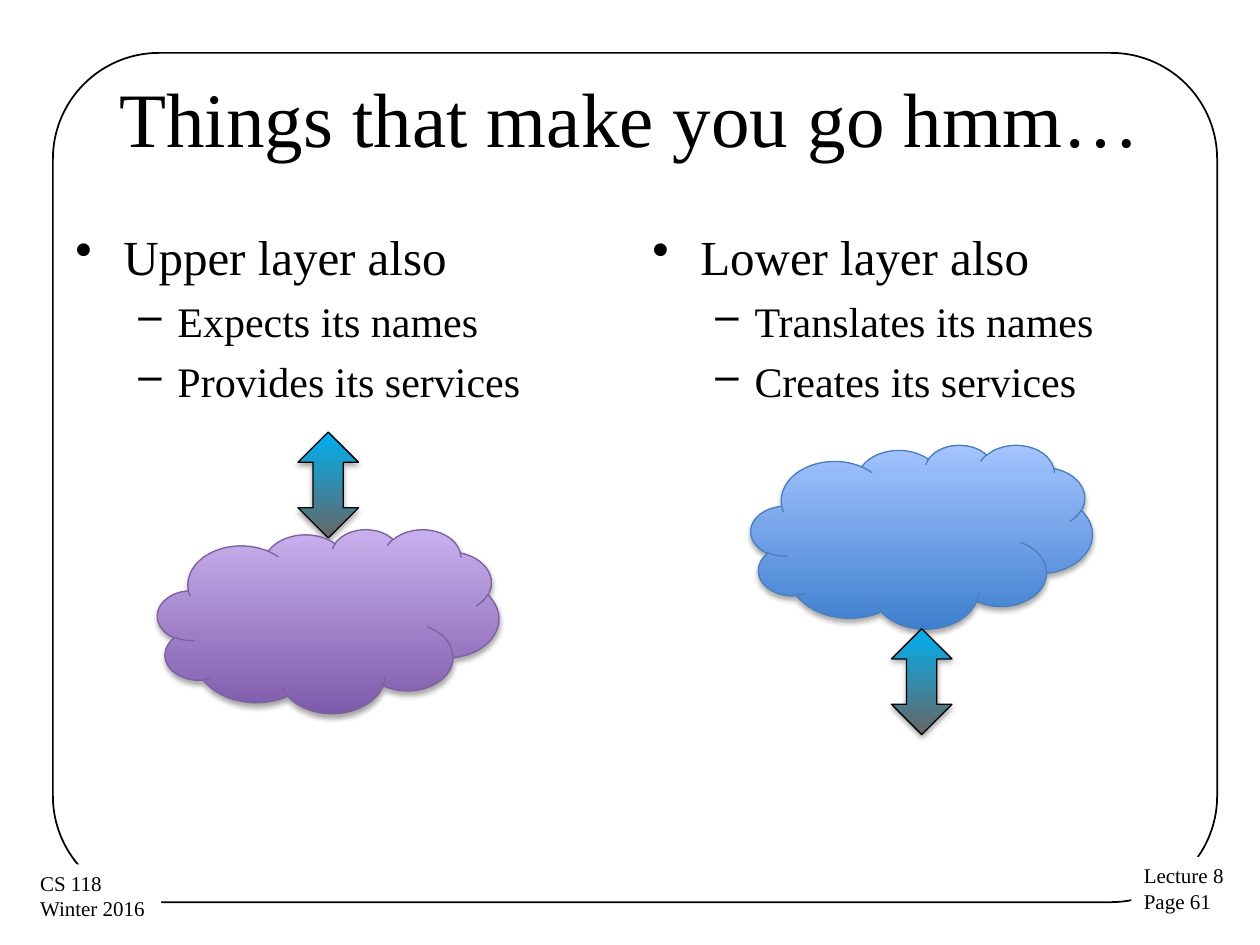
import pptx
import pptx.dml.color
import pptx.enum.shapes
import pptx.enum.text
import pptx.oxml
import pptx.oxml.ns
import pptx.util

RGB = pptx.dml.color.RGBColor
SHAPE = pptx.enum.shapes.MSO_SHAPE
ALIGN = pptx.enum.text.PP_ALIGN
ANCHOR = pptx.enum.text.MSO_ANCHOR

BLACK = RGB(0x00, 0x00, 0x00)
WHITE = RGB(0xFF, 0xFF, 0xFF)
GREY = RGB(0x66, 0x66, 0x66)
CYAN = RGB(0x00, 0xB0, 0xF0)
PURPLE = RGB(0x7F, 0x5B, 0xAB)
LILAC = RGB(0xC8, 0xB0, 0xED)
PURPLE_EDGE = RGB(0x7D, 0x60, 0xA0)
BLUE = RGB(0x3F, 0x80, 0xCE)
SKY = RGB(0xA4, 0xC4, 0xFF)
BLUE_EDGE = RGB(0x4B, 0x7E, 0xBC)

COLUMNS, ROWS = 100, 75
CLOUD_WIDTH, CLOUD_HEIGHT = 27.1, 14.6
ARROW_WIDTH, ARROW_HEIGHT = 4.8, 8.4
LEVELS = [("•", 28, 0.38, 0.38), ("–", 24, 0.81, 0.31)]
SHADOW = (
    '<a:outerShdw xmlns:a="http://schemas.openxmlformats.org/drawingml/2006/main" '
    'blurRad="40000" dist="23000" dir="5400000" rotWithShape="0">'
    '<a:srgbClr val="000000"><a:alpha val="35000"/></a:srgbClr></a:outerShdw>'
)


class LayerSlide:
    """Draws on one slide, with lengths in columns and rows of its grid."""

    font = "Times New Roman"

    def __init__(self, deck):
        self.page = deck.slides.add_slide(deck.slide_layouts[6])
        self.column = deck.slide_width / COLUMNS
        self.row = deck.slide_height / ROWS

    def place(self, left, top, width, height):
        return (int(left * self.column), int(top * self.row),
                int(width * self.column), int(height * self.row))

    def style(self, para, size):
        para.font.name = self.font
        para.font.size = pptx.util.Pt(size)
        para.font.color.rgb = BLACK

    def text(self, lines, size, *place, align=ALIGN.LEFT, anchor=ANCHOR.TOP, wrap=True):
        box = self.page.shapes.add_textbox(*self.place(*place))
        frame = box.text_frame
        frame.word_wrap = wrap
        frame.vertical_anchor = anchor
        frame.text = "\n".join(lines)
        for para in frame.paragraphs:
            para.alignment = align
            self.style(para, size)
        return box

    def label(self, lines, *place):
        box = self.text(lines, 12, *place, wrap=False)
        box.fill.solid()
        box.fill.fore_color.rgb = WHITE

    def bullets(self, items, *place):
        box = self.page.shapes.add_textbox(*self.place(*place))
        frame = box.text_frame
        frame.word_wrap = True
        frame.text = "\n".join(text for level, text in items)
        for para, (level, text) in zip(frame.paragraphs, items):
            mark, size, margin, hang = LEVELS[level]
            para.level = level
            para.space_before = pptx.util.Pt(round(size * 0.23, 1))
            props = para._p.get_or_add_pPr()
            props.set("marL", str(pptx.util.Inches(margin)))
            props.set("indent", str(-pptx.util.Inches(hang)))
            bullet = pptx.oxml.parse_xml(
                f'<a:buChar {pptx.oxml.ns.nsdecls("a")} char="{mark}"/>')
            props.append(bullet)
            self.style(para, size)

    def frame(self, *place):
        shape = self.page.shapes.add_shape(SHAPE.ROUNDED_RECTANGLE, *self.place(*place))
        shape.adjustments[0] = 0.125
        shape.fill.background()
        shape.line.color.rgb = BLACK
        shape.line.width = pptx.util.Pt(1)
        shape.shadow.inherit = False

    def shaded(self, group, kind, bottom, top, edge, *place):
        shape = group.shapes.add_shape(kind, *self.place(*place))
        shape.fill.gradient()
        shape.fill.gradient_angle = 90
        for stop, color in zip(shape.fill.gradient_stops, (bottom, top)):
            stop.color.rgb = color
        shape.line.color.rgb = edge
        shape.line.width = pptx.util.Pt(0.75)
        shape.shadow.inherit = False
        effects = shape._element.spPr.find(pptx.oxml.ns.qn("a:effectLst"))
        effects.append(pptx.oxml.parse_xml(SHADOW))

    def layer(self, left, top, colors, arrow_top, arrow_first):
        group = self.page.shapes.add_group_shape()
        arrow_left = left + (CLOUD_WIDTH - ARROW_WIDTH) / 2
        parts = [
            (SHAPE.CLOUD, *colors, left, top, CLOUD_WIDTH, CLOUD_HEIGHT),
            (SHAPE.UP_DOWN_ARROW, GREY, CYAN, BLACK,
             arrow_left, arrow_top, ARROW_WIDTH, ARROW_HEIGHT),
        ]
        for part in reversed(parts) if arrow_first else parts:
            self.shaded(group, *part)


def main():
    deck = pptx.Presentation()
    deck.slide_width = pptx.util.Inches(10)
    deck.slide_height = pptx.util.Inches(7.5)
    slide = LayerSlide(deck)
    slide.frame(4.2, 4.2, 92.4, 67.4)
    slide.label(["Lecture 8", "Page 61"], 89.8, 68, 8.4, 5.1)
    slide.label(["CS 118", "Winter 2016"], 2.2, 68.6, 10.6, 5.1)
    slide.text(["Things that make you go hmm…"], 44, 5, 3, 90, 12.5,
               align=ALIGN.CENTER, anchor=ANCHOR.MIDDLE)
    columns = [
        (5, "Upper layer also", "Expects its names", "Provides its services"),
        (50.8, "Lower layer also", "Translates its names", "Creates its services"),
    ]
    for left, heading, *points in columns:
        items = [(0, heading)] + [(1, point) for point in points]
        slide.bullets(items, left, 17.5, 44.2, 49.5)
    slide.layer(12.5, 42, (PURPLE, LILAC, PURPLE_EDGE), 34.3, True)
    slide.layer(59.6, 35.3, (BLUE, SKY, BLUE_EDGE), 49.9, False)
    deck.save("out.pptx")


if __name__ == "__main__":
    main()
